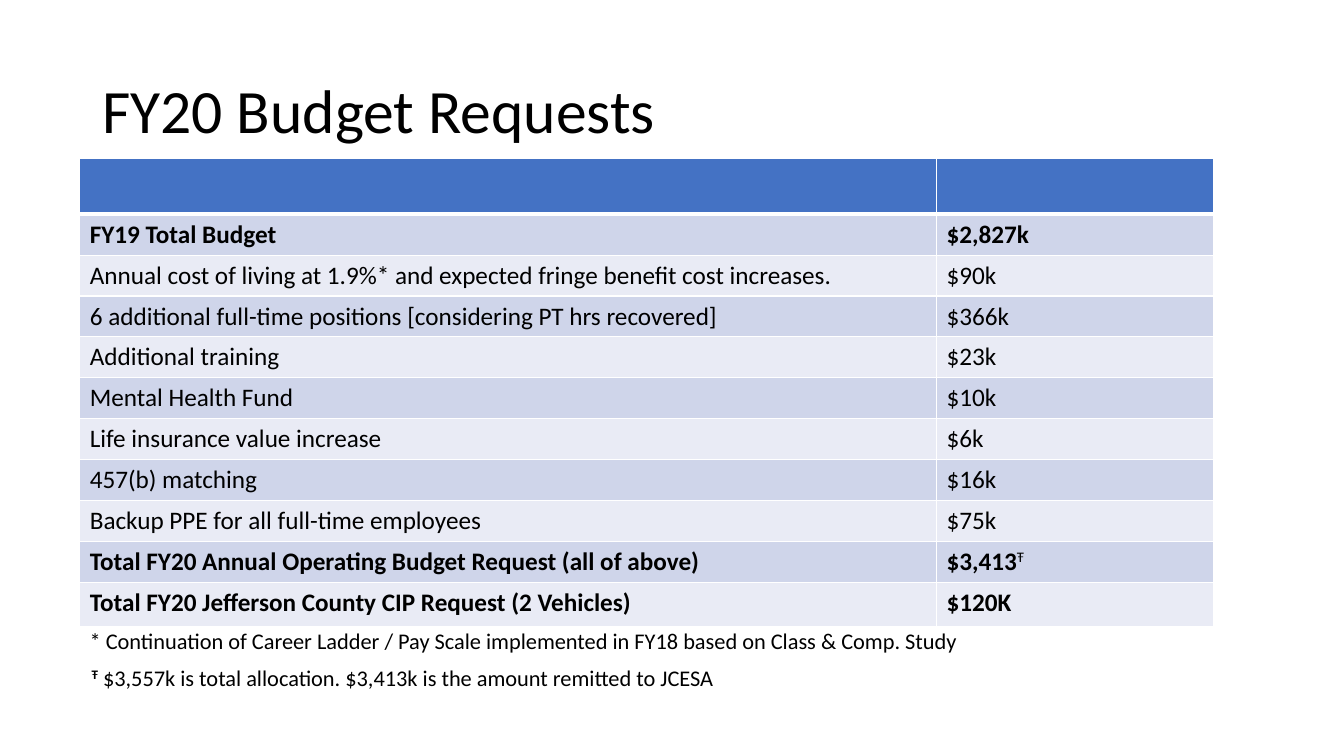
from lxml import etree
from pptx import Presentation
from pptx import util as u
from pptx.dml.color import RGBColor
from pptx.enum import text
from pptx.oxml.ns import qn

HEADER, BAND_DARK, BAND_LIGHT = "4472C4", "CFD5EA", "E9EBF5"
BLACK, WHITE = "000000", "FFFFFF"
DAGGER = "Ŧ"


def color(value):
    return RGBColor.from_string(value)


def add_run(p, content, size, bold=False, raised=False):
    r = p.add_run()
    r.text = content
    r.font.name = "Calibri"
    r.font.size = u.Pt(size)
    r.font.bold = bold
    r.font.color.rgb = color(BLACK)
    if raised:
        r._r.get_or_add_rPr().set("baseline", "30000")


prs = Presentation()
prs.slide_width, prs.slide_height = u.Cm(33.87), u.Cm(19.05)
slide = prs.slides.add_slide(prs.slide_layouts[6])

# Title
title = slide.shapes.add_textbox(u.Cm(2.33), u.Cm(1.01), u.Cm(29.21), u.Cm(3.68))
tf = title.text_frame
tf.word_wrap = True
tf.vertical_anchor = text.MSO_ANCHOR.MIDDLE
tf.paragraphs[0].line_spacing = 0.9
add_run(tf.paragraphs[0], "FY20 Budget Requests", 44)

# Budget table: item, amount, bold, raised mark
budget = [
    ("", "", False, ""),
    ("FY19 Total Budget", "$2,827k", True, ""),
    ("Annual cost of living at 1.9%* and expected fringe benefit cost increases.",
     "$90k", False, ""),
    ("6 additional full-time positions [considering PT hrs recovered]",
     "$366k", False, ""),
    ("Additional training", "$23k", False, ""),
    ("Mental Health Fund", "$10k", False, ""),
    ("Life insurance value increase", "$6k", False, ""),
    ("457(b) matching", "$16k", False, ""),
    ("Backup PPE for all full-time employees", "$75k", False, ""),
    ("Total FY20 Annual Operating Budget Request (all of above)",
     "$3,413", True, DAGGER),
    ("Total FY20 Jefferson County CIP Request (2 Vehicles)", "$120K", True, ""),
]
last = len(budget) - 1
table = slide.shapes.add_table(len(budget), 2, u.Cm(2.01), u.Cm(4), u.Cm(28.58),
                               u.Cm(11.8)).table
table.columns[0].width, table.columns[1].width = u.Cm(21.59), u.Cm(6.99)

for i, (item, amount, bold, mark) in enumerate(budget):
    table.rows[i].height = u.Cm({0: 1.4, last: 1.12}.get(i, 1.03))
    for j, content in enumerate((item, amount)):
        cell = table.cell(i, j)
        p = cell.text_frame.paragraphs[0]
        if content:
            add_run(p, content, 18, bold)
        if j == 1 and mark:
            add_run(p, mark, 18, raised=True)

        tc_pr = cell._tc.get_or_add_tcPr()
        for side in ("lnL", "lnR", "lnT", "lnB"):
            under_header = (i, side) in ((0, "lnB"), (1, "lnT"))
            ln = etree.SubElement(tc_pr, qn(f"a:{side}"),
                                  w=str(u.Pt(3 if under_header else 1)))
            line_fill = etree.SubElement(ln, qn("a:solidFill"))
            etree.SubElement(line_fill, qn("a:srgbClr"), val=WHITE)
        cell.fill.solid()
        band = BAND_DARK if i % 2 else BAND_LIGHT
        cell.fill.fore_color.rgb = color(band if i else HEADER)

# Footnotes: left, top, width, mark, wording
footnotes = [
    (2.01, 15.67, 28.58, "",
     "* Continuation of Career Ladder / Pay Scale implemented in FY18 "
     "based on Class & Comp. Study"),
    (2.06, 16.61, 25.3, DAGGER,
     " $3,557k is total allocation. $3,413k is the amount remitted to JCESA"),
]
for left, top, width, mark, wording in footnotes:
    note = slide.shapes.add_textbox(u.Cm(left), u.Cm(top), u.Cm(width), u.Cm(0.94))
    tf = note.text_frame
    tf.word_wrap = True
    tf.auto_size = text.MSO_AUTO_SIZE.SHAPE_TO_FIT_TEXT
    if mark:
        add_run(tf.paragraphs[0], mark, 16, bold=True, raised=True)
    add_run(tf.paragraphs[0], wording, 16)

prs.save("out.pptx")
